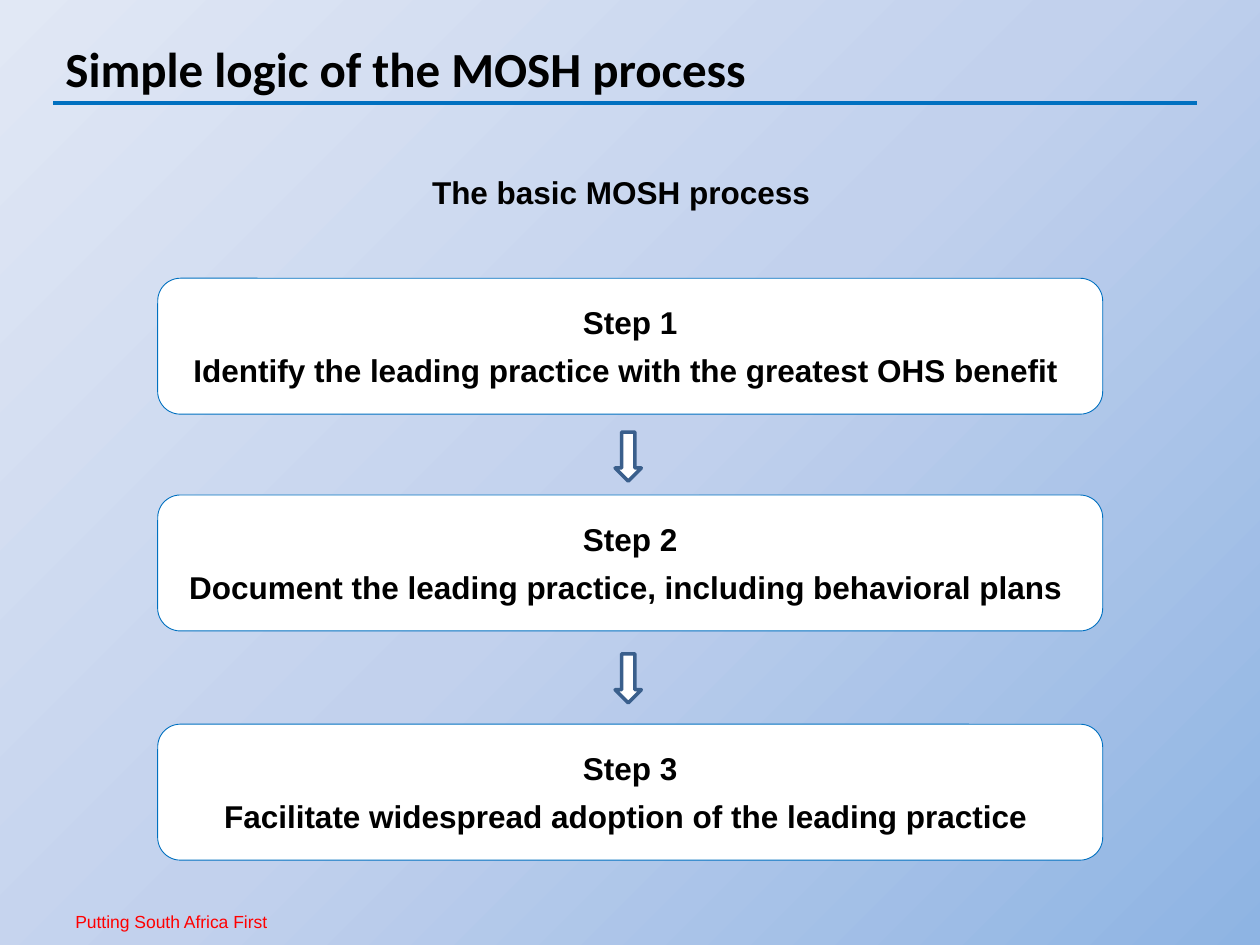
"""Build the slide that shows the three steps of the MOSH process."""
from pptx import Presentation
from pptx.dml.color import RGBColor
from pptx.enum.shapes import MSO_CONNECTOR, MSO_SHAPE
from pptx.enum.text import MSO_ANCHOR, MSO_AUTO_SIZE, PP_ALIGN
from pptx.oxml import parse_xml
from pptx.oxml.ns import nsdecls
from pptx.util import Cm, Pt
from lxml.etree import SubElement


def rgb(value):
    """Return the colour for a hex string."""
    return RGBColor.from_string(value)


def write(sp, lines, size, font="Arial", color="000000", bold=True,
          align=PP_ALIGN.CENTER, anchor=MSO_ANCHOR.MIDDLE, inset=0.1):
    """Fill a shape with evenly formatted paragraphs."""
    tf = sp.text_frame
    tf.word_wrap = True
    tf.auto_size = MSO_AUTO_SIZE.NONE
    tf.vertical_anchor = anchor
    tf.margin_left = tf.margin_right = Cm(inset)
    tf.margin_top = tf.margin_bottom = Cm(min(inset, 0.13))
    tf.text = "\n".join(lines)
    for i, p in enumerate(tf.paragraphs):
        p.alignment = align
        p.space_before = Pt(6 if i else 0)
        for r in p.runs:
            r.font.name = font
            r.font.size = Pt(size)
            r.font.bold = bold
            r.font.color.rgb = rgb(color)


prs = Presentation()
prs.slide_width, prs.slide_height = Cm(25.4), Cm(19.05)
s = prs.slides.add_slide(prs.slide_layouts[5])

stops = "".join(
    f'<a:gs pos="{pos}000"><a:srgbClr val="{color}"/></a:gs>'
    for pos, color in [(0, "8EB4E3"), (50, "C2D1ED"), (100, "E1E8F5")])
s.element.cSld.insert(0, parse_xml(
    f'<p:bg {nsdecls("p", "a")}><p:bgPr><a:gradFill rotWithShape="1">'
    f'<a:gsLst>{stops}</a:gsLst>'
    '<a:path path="circle"><a:fillToRect l="100000" t="100000"/></a:path>'
    '<a:tileRect r="-100000" b="-100000"/>'
    '</a:gradFill><a:effectLst/></p:bgPr></p:bg>'))

title = s.shapes.title
title.left, title.top, title.width, title.height = Cm(1.07), Cm(0.64), Cm(23.06), Cm(1.45)
write(title, ["Simple logic of the MOSH process"], 28, "Calibri",
      align=PP_ALIGN.LEFT, anchor=MSO_ANCHOR.TOP, inset=0.25)

footer = s.shapes.add_textbox(Cm(1.42), Cm(18.26), Cm(4.29), Cm(0.64))
write(footer, ["Putting South Africa First"], 10, color="FF0000", bold=False,
      align=PP_ALIGN.LEFT, anchor=MSO_ANCHOR.TOP)

rule = s.shapes.add_connector(MSO_CONNECTOR.STRAIGHT, Cm(1.07), Cm(2.08), Cm(24.13), Cm(2.08))
rule.line.color.rgb = rgb("0070C0")
rule.line.width = Pt(2)
SubElement(rule.element.spPr, "{http://schemas.openxmlformats.org/drawingml/2006/main}effectLst")

steps = [
    (5.61, "Identify the leading practice with the greatest OHS benefit "),
    (9.98, "Document the leading practice, including behavioral plans "),
    (14.6, "Facilitate widespread adoption of the leading practice "),
]
for n, (top, text) in enumerate(steps, 1):
    sp = s.shapes.add_shape(MSO_SHAPE.ROUNDED_RECTANGLE, Cm(3.18), Cm(top), Cm(19.05), Cm(2.74))
    sp.shadow.inherit = False
    sp.fill.solid()
    sp.fill.fore_color.rgb = rgb("FFFFFF")
    sp.line.color.rgb = rgb("0070C0")
    sp.line.width = Pt(0.5)
    write(sp, [f"Step {n}", text], 18)

for top in (8.71, 13.18):
    arrow = s.shapes.add_shape(MSO_SHAPE.DOWN_ARROW, Cm(12.4), Cm(top), Cm(0.53), Cm(0.99))
    arrow.shadow.inherit = False
    arrow.fill.solid()
    arrow.fill.fore_color.rgb = rgb("FFFFFF")
    arrow.line.color.rgb = rgb("3A5F8C")
    arrow.line.width = Pt(2)

heading = s.shapes.add_textbox(Cm(8), Cm(2.74), Cm(9.22), Cm(1.88))
write(heading, ["The basic MOSH process "], 18)
heading.text_frame.paragraphs[0].line_spacing = 1.5

prs.save("out.pptx")
